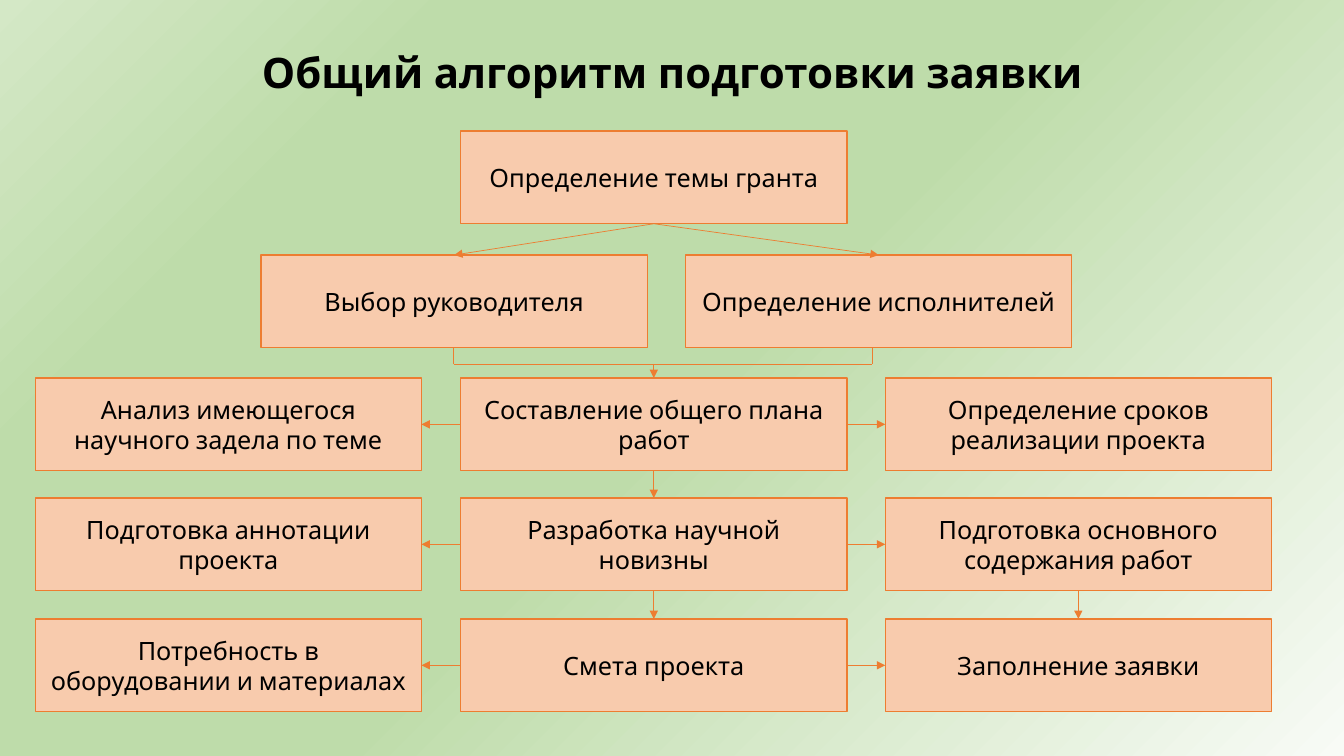
"""Builds a flowchart slide on preparing a grant application."""
from dataclasses import dataclass

from lxml.etree import SubElement as Sub
from pptx import Presentation
from pptx.dml.color import RGBColor as RGB
from pptx.enum.shapes import MSO_CONNECTOR as CONN, MSO_SHAPE as SHAPE
from pptx.enum.text import MSO_ANCHOR as ANCHOR, PP_ALIGN as ALIGN
from pptx.oxml.ns import qn
from pptx.slide import Slide
from pptx.text.text import TextFrame
from pptx.util import Inches, Pt

COLORS = {"box": "F8CBAD", "line": "ED7D31", "text": "000000"}
BACKGROUND = [(0, "F8FBF6"), (48, "BEDCAA"), (78, "BEDCAA"), (100, "D4E8C6")]
FONT = "Karla"
BOX_W, BOX_H = 3.83, 0.92
COLS = [0.35, 4.57, 8.78]
ROWS = [3.75, 4.94, 6.14]
GRID = [
    ["Анализ имеющегося научного задела по теме",
     "Составление общего плана работ",
     "Определение сроков реализации проекта"],
    ["Подготовка аннотации проекта",
     "Разработка научной новизны",
     "Подготовка основного содержания работ"],
    ["Потребность в оборудовании и материалах",
     "Смета проекта",
     "Заполнение заявки"],
]


@dataclass(frozen=True)
class Box:
    text: str
    x: float
    y: float

    @property
    def mid_x(self) -> float:
        return self.x + BOX_W / 2

    @property
    def mid_y(self) -> float:
        return self.y + BOX_H / 2

    @property
    def right(self) -> float:
        return self.x + BOX_W

    @property
    def bottom(self) -> float:
        return self.y + BOX_H


@dataclass(frozen=True)
class Link:
    x1: float
    y1: float
    x2: float
    y2: float
    arrow: bool = True


def set_background(s: Slide) -> None:
    fill = s.background.fill
    fill.gradient()
    fill.gradient_angle = 135
    stops = s._element.find(".//" + qn("a:gsLst"))
    for stop in list(stops):
        stops.remove(stop)
    for pos, color in BACKGROUND:
        stop = Sub(stops, qn("a:gs"), pos=str(pos * 1000))
        Sub(stop, qn("a:srgbClr"), val=color)


def write(tf: TextFrame, text: str, size: float, bold: bool = False) -> None:
    tf.word_wrap = True
    tf.vertical_anchor = ANCHOR.MIDDLE
    p = tf.paragraphs[0]
    p.alignment = ALIGN.CENTER
    r = p.add_run()
    r.text = text
    r.font.name, r.font.size, r.font.bold = FONT, Pt(size), bold
    r.font.color.rgb = RGB.from_string(COLORS["text"])


def add_title(s: Slide, text: str) -> None:
    sp = s.shapes.add_textbox(Inches(0.92), Inches(0.38), Inches(11.5), Inches(0.73))
    write(sp.text_frame, text, 30, bold=True)
    sp.text_frame.paragraphs[0].line_spacing = 0.9


def add_box(s: Slide, box: Box) -> None:
    sp = s.shapes.add_shape(SHAPE.RECTANGLE, Inches(box.x), Inches(box.y),
                            Inches(BOX_W), Inches(BOX_H))
    sp.shadow.inherit = False
    sp.fill.solid()
    sp.fill.fore_color.rgb = RGB.from_string(COLORS["box"])
    sp.line.color.rgb = RGB.from_string(COLORS["line"])
    sp.line.width = Pt(1)
    write(sp.text_frame, box.text, 18)


def add_link(s: Slide, link: Link) -> None:
    cx = s.shapes.add_connector(CONN.STRAIGHT, Inches(link.x1), Inches(link.y1),
                                Inches(link.x2), Inches(link.y2))
    cx.line.color.rgb = RGB.from_string(COLORS["line"])
    cx.line.width = Pt(0.5)
    if link.arrow:
        Sub(cx.line._get_or_add_ln(), qn("a:tailEnd"), type="triangle")
    Sub(cx._element.spPr, qn("a:effectLst"))


def main() -> None:
    prs = Presentation()
    prs.slide_width, prs.slide_height = Inches(13.33), Inches(7.5)
    s = prs.slides.add_slide(prs.slide_layouts[6])
    set_background(s)
    add_title(s, "Общий алгоритм подготовки заявки")

    topic = Box("Определение темы гранта", COLS[1], 1.3)
    leader = Box("Выбор руководителя", 2.59, 2.53)
    team = Box("Определение исполнителей", 6.8, 2.53)
    grid = [[Box(text, x, y) for text, x in zip(texts, COLS)]
            for texts, y in zip(GRID, ROWS)]
    plan = grid[0][1]
    bus_y, bus_left, bus_right = 3.61, 4.5, 8.65

    links = [Link(topic.mid_x, topic.bottom, b.mid_x, b.y) for b in (leader, team)]
    links += [Link(x, leader.bottom, x, bus_y, arrow=False)
              for x in (bus_left, bus_right)]
    links += [Link(bus_left, bus_y, bus_right, bus_y, arrow=False),
              Link(plan.mid_x, bus_y, plan.mid_x, plan.y)]
    for left, mid, right in grid:
        links += [Link(mid.x, mid.mid_y, left.right, left.mid_y),
                  Link(mid.right, mid.mid_y, right.x, right.mid_y)]
    for row, col in ((0, 1), (1, 1), (1, 2)):
        upper, lower = grid[row][col], grid[row + 1][col]
        links.append(Link(upper.mid_x, upper.bottom, lower.mid_x, lower.y))

    for box in [topic, leader, team, *sum(grid, [])]:
        add_box(s, box)
    for link in links:
        add_link(s, link)
    prs.save("out.pptx")


if __name__ == "__main__":
    main()
